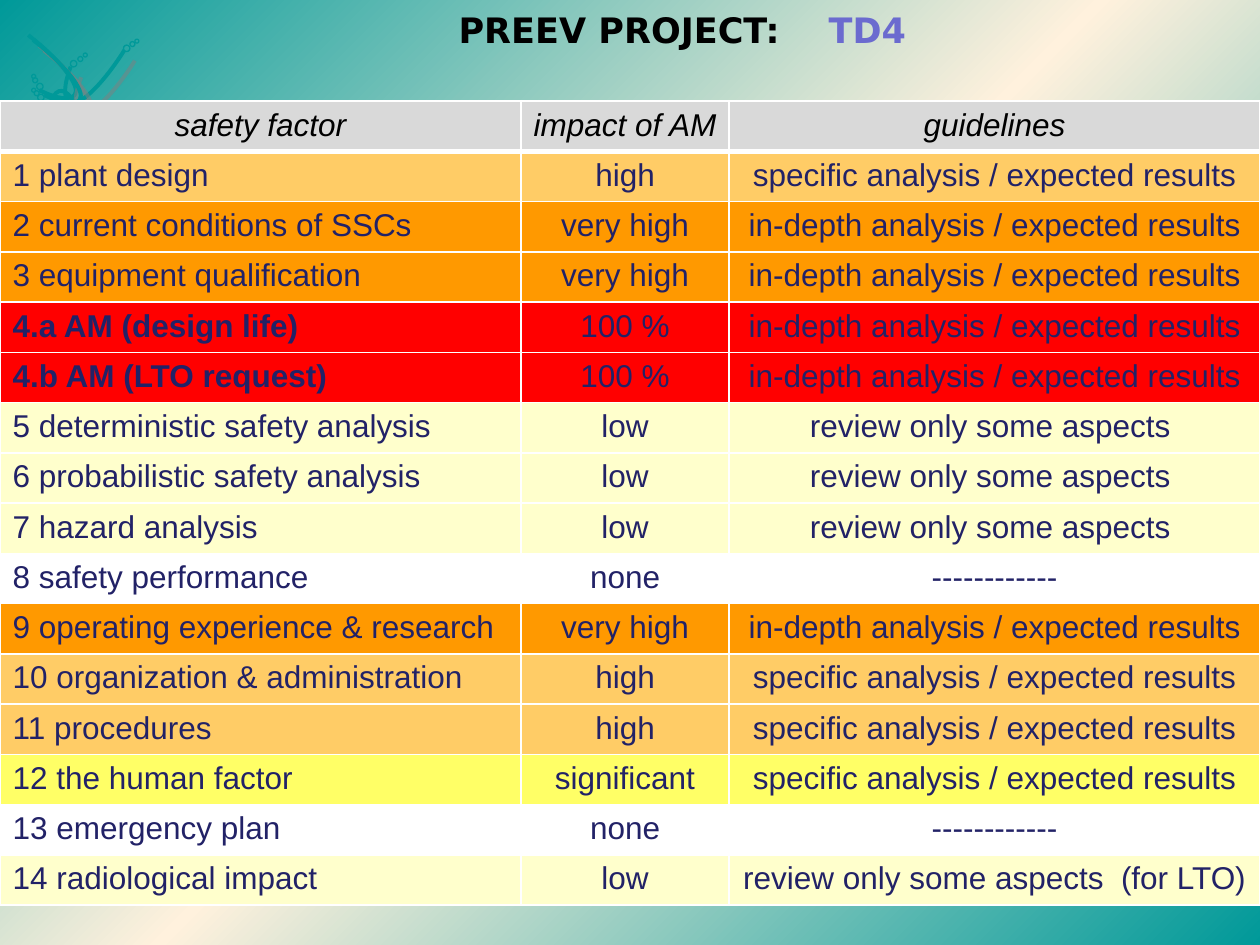
from copy import deepcopy
from typing import NamedTuple

from lxml import etree
from pptx import Presentation
from pptx import util as u
from pptx.dml.color import RGBColor
from pptx.enum import shapes, text
from pptx.oxml import ns

TEAL, WHITE, NAVY, BLACK = "009999", "FFFFFF", "222267", "000000"
IN_DEPTH = "in-depth analysis / expected results"
SPECIFIC = "specific analysis / expected results"
REVIEW = "review only some aspects "
NO_GUIDE = "------------"
FILLS = {"high": "FFCC66", "very high": "FF9900", "100 %": "FF0000", "low": "FFFFCC",
         "none": WHITE, "significant": "FFFF66", "impact of AM": "D9D9D9"}


class Factor(NamedTuple):
    name: str
    impact: str
    guideline: str


class Curl(NamedTuple):
    left: float
    top: float
    rotation: float


class Point(NamedTuple):
    x: float
    y: float


FACTORS = [
    Factor("safety factor", "impact of AM", "guidelines"),
    Factor("1 plant design", "high", SPECIFIC),
    Factor("2 current conditions of SSCs", "very high", IN_DEPTH),
    Factor("3 equipment qualification", "very high", IN_DEPTH),
    Factor("4.a AM (design life)", "100 %", IN_DEPTH),
    Factor("4.b AM (LTO request)", "100 %", IN_DEPTH),
    Factor("5 deterministic safety analysis", "low", REVIEW),
    Factor("6 probabilistic safety analysis", "low", REVIEW),
    Factor("7 hazard analysis", "low", REVIEW),
    Factor("8 safety performance", "none", NO_GUIDE),
    Factor("9 operating experience & research", "very high", IN_DEPTH),
    Factor("10 organization & administration", "high", SPECIFIC),
    Factor("11 procedures", "high", SPECIFIC),
    Factor("12 the human factor", "significant", SPECIFIC),
    Factor("13 emergency plan", "none", NO_GUIDE),
    Factor("14 radiological impact", "low", REVIEW + " (for LTO)"),
]

ARC = [Point(0, 0), Point(0.81, 0.02), Point(1.47, 0.2), Point(1.47, 0.41),
       Point(1.47, 0.56), Point(1.24, 0.69), Point(0.84, 0.76)]
CURLS = [Curl(0.2, 1.07, 36.4), Curl(0.58, 2.18, 258.2),
         Curl(1.07, 1.07, 120.7), Curl(0.3, 1.17, 36.4)]

BEAD_SIZES = [0.13, 0.08, 0.1]
BEADS = [
    [Point(1.42, 1.22), Point(1.68, 1.07), Point(1.57, 1.14)],
    [Point(0.74, 1.68), Point(0.64, 1.5), Point(0.66, 1.57)],
    [Point(0.76, 1.9), Point(0.64, 1.78), Point(0.69, 1.83)],
    [Point(2.49, 0.91), Point(2.72, 0.79), Point(2.62, 0.84)],
]


def rgb(value: str) -> RGBColor:
    """Turn a hex string into a colour."""
    return RGBColor.from_string(value)


def outline(sp, width: float) -> None:
    """Leave a shape unfilled with a teal line."""
    sp.shadow.inherit = False
    sp.fill.background()
    sp.line.color.rgb = rgb(TEAL)
    sp.line.width = u.Pt(width)


def bend(sp) -> None:
    """Turn each three line segments into one cubic curve."""
    route = sp._element.find(".//" + ns.qn("a:moveTo")).getparent()
    segments = route.findall(ns.qn("a:lnTo"))
    for i in range(0, len(segments), 3):
        curve = etree.SubElement(route, ns.qn("a:cubicBezTo"))
        for segment in segments[i:i + 3]:
            curve.append(segment[0])
            route.remove(segment)


def draw_curl(s, curl: Curl) -> None:
    """Draw a rotated arc with a grey shadow."""
    points = [(u.Cm(x), u.Cm(y)) for x, y in ARC]
    builder = s.shapes.build_freeform(*points[0])
    builder.add_line_segments(points[1:], close=False)
    sp = builder.convert_to_shape(u.Cm(curl.left), u.Cm(curl.top))
    bend(sp)
    sp.rotation = curl.rotation
    outline(sp, 2.25)
    effects = sp._element.spPr.find(ns.qn("a:effectLst"))
    shadow = etree.SubElement(effects, ns.qn("a:outerShdw"), dist=str(u.Pt(8.5)),
                              dir="2700000", rotWithShape="0")
    color = etree.SubElement(shadow, ns.qn("a:srgbClr"), val="808080")
    etree.SubElement(color, ns.qn("a:alpha"), val="50000")


def draw_bead(s, at: Point, size: float) -> None:
    """Draw one small ring."""
    sp = s.shapes.add_shape(shapes.MSO_SHAPE.OVAL, u.Cm(at.x), u.Cm(at.y), u.Cm(size), u.Cm(size))
    outline(sp, 0.75)


def set_background(s) -> None:
    """Give the slide its diagonal three-stop gradient."""
    fill = s.background.fill
    fill.gradient()
    fill.gradient_angle = 315
    stops = s._element.find(".//" + ns.qn("a:gsLst"))
    stops.insert(1, deepcopy(stops[0]))
    for stop, position, color in zip(fill.gradient_stops, (0, 0.5, 1), (TEAL, "FFF1DD", TEAL)):
        stop.position = position
        stop.color.rgb = rgb(color)


def set_title(s) -> None:
    """Place and write the title."""
    title = s.shapes.title
    title.left, title.top, title.width, title.height = map(u.Cm, (2.11, -0.69, 23.29, 3.18))
    tf = title.text_frame
    tf.vertical_anchor = text.MSO_ANCHOR.MIDDLE
    tf.margin_bottom = u.Cm(0.75)
    p = tf.paragraphs[0]
    p.alignment = text.PP_ALIGN.CENTER
    p.font.name, p.font.size, p.font.bold = "DejaVu Sans", u.Pt(20), True
    for words, color in (("PREEV PROJECT:", BLACK), (" ", BLACK), ("TD4", "6B6BCF")):
        r = p.add_run()
        r.text = words
        r.font.color.rgb = rgb(color)
    p.runs[1].font._element.set("spc", "2100")


def set_borders(cell, top: float, bottom: float) -> None:
    """Draw white borders around a cell."""
    tc_pr = cell._tc.get_or_add_tcPr()
    for i, (side, width) in enumerate((("L", 1), ("R", 1), ("T", top), ("B", bottom))):
        ln = etree.Element(ns.qn(f"a:ln{side}"), w=str(u.Pt(width)))
        fill = etree.SubElement(ln, ns.qn("a:solidFill"))
        etree.SubElement(fill, ns.qn("a:srgbClr"), val=WHITE)
        tc_pr.insert(i, ln)


def draw_table(s, factors: list[Factor]) -> None:
    """Draw the factors, coloured by impact."""
    table = s.shapes.add_table(len(factors), 3, 0, u.Cm(2.04), u.Cm(25.4), u.Cm(16.22)).table
    table.first_row = table.horz_banding = False
    for column, width in zip(table.columns, (10.5, 4.2, 10.7)):
        column.width = u.Cm(width)
    for i, factor in enumerate(factors):
        header = i == 0
        for j, words in enumerate(factor):
            cell = table.cell(i, j)
            cell.fill.solid()
            cell.fill.fore_color.rgb = rgb(FILLS[factor.impact])
            set_borders(cell, 3 if i == 1 else 1, 3 if header else 1)
            cell.text = words
            p = cell.text_frame.paragraphs[0]
            p.alignment = text.PP_ALIGN.CENTER if header or j else text.PP_ALIGN.LEFT
            p.font.name, p.font.size = "Arial", u.Pt(18)
            p.font.italic = header
            p.font.bold = j == 0 and factor.impact == "100 %"
            p.font.color.rgb = rgb(BLACK if header else NAVY)


def main() -> None:
    """Build the slide."""
    prs = Presentation()
    prs.slide_width, prs.slide_height = u.Cm(25.4), u.Cm(19.05)
    s = prs.slides.add_slide(prs.slide_layouts[5])
    set_background(s)
    for curl in CURLS:
        draw_curl(s, curl)
    for group in BEADS:
        for at, size in zip(group, BEAD_SIZES):
            draw_bead(s, at, size)
    set_title(s)
    draw_table(s, FACTORS)
    prs.save("out.pptx")


if __name__ == "__main__":
    main()
